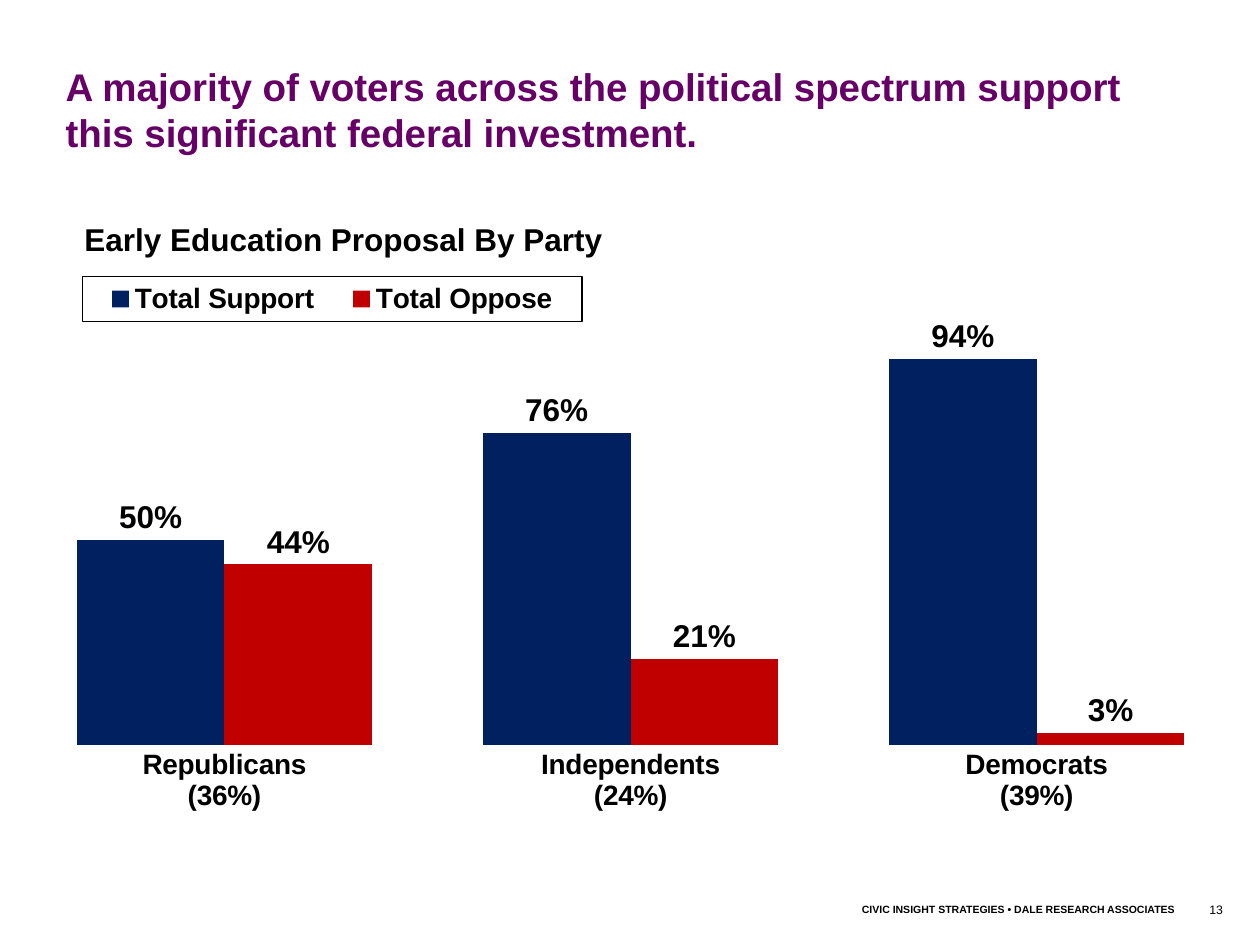
import pptx
import pptx.chart.data
import pptx.dml.color
import pptx.enum.chart
import pptx.enum.text
import pptx.oxml
import pptx.oxml.ns
import pptx.util
from pptx.util import Inches

COLORS = {"text": "000000", "title": "660066", "support": "002060", "oppose": "C00000"}


def add_text(page, text, place, size, color="text", bold=True, align=None, inset=None):
    box = page.shapes.add_textbox(*[Inches(length) for length in place])
    frame = box.text_frame
    frame.word_wrap = True
    frame.auto_size = pptx.enum.text.MSO_AUTO_SIZE.SHAPE_TO_FIT_TEXT
    if inset is not None:
        frame.margin_left = frame.margin_right = Inches(inset)
        frame.margin_top = frame.margin_bottom = Inches(inset)
    para = frame.paragraphs[0]
    para.text = text
    para.alignment = align
    para.font.name = "Arial"
    para.font.size = pptx.util.Pt(size)
    para.font.bold = bold
    para.font.color.rgb = pptx.dml.color.RGBColor.from_string(COLORS[color])


def set_layout(parent, index, fractions, target=""):
    for old in parent.findall(pptx.oxml.ns.qn("c:layout")):
        parent.remove(old)
    sizes = "".join(f'<c:{key} val="{value}"/>' for key, value in zip("xywh", fractions))
    parent.insert(index, pptx.oxml.parse_xml(
        f'<c:layout {pptx.oxml.ns.nsdecls("c")}><c:manualLayout>{target}'
        f'<c:xMode val="edge"/><c:yMode val="edge"/>{sizes}</c:manualLayout></c:layout>'))


deck = pptx.Presentation()
deck.slide_width = Inches(10)
deck.slide_height = Inches(7.5)
page = deck.slides.add_slide(deck.slide_layouts[6])

data = pptx.chart.data.CategoryChartData(number_format="0%")
data.categories = ["Republicans\n(36%)", "Independents\n(24%)", "Democrats\n(39%)"]
data.add_series("Total Support", [0.5, 0.76, 0.94])
data.add_series("Total Oppose", [0.44, 0.21, 0.03])
chart = page.shapes.add_chart(
    pptx.enum.chart.XL_CHART_TYPE.COLUMN_CLUSTERED,
    Inches(0.17), Inches(1.83), Inches(9.67), Inches(5.17), data).chart
chart.has_title = False
chart.font.name = "Arial"
chart.font.size = pptx.util.Pt(18)
chart.font.color.rgb = pptx.dml.color.RGBColor.from_string(COLORS["text"])

category_axis = chart.category_axis
category_axis.major_tick_mark = pptx.enum.chart.XL_TICK_MARK.NONE
category_axis.format.line.fill.background()
category_axis.tick_labels.font.name = "Arial"
category_axis.tick_labels.font.size = pptx.util.Pt(16)
category_axis.tick_labels.font.bold = True

value_axis = chart.value_axis
value_axis.minimum_scale = 0
value_axis.maximum_scale = 1
value_axis.major_unit = 0.2
value_axis.has_major_gridlines = False
value_axis.visible = False

plot = chart.plots[0]
plot.gap_width = 75
plot.overlap = 0
plot.vary_by_categories = False
for series, color in zip(plot.series, ["support", "oppose"]):
    series.format.fill.solid()
    series.format.fill.fore_color.rgb = pptx.dml.color.RGBColor.from_string(COLORS[color])
    labels = series.data_labels
    labels.show_value = True
    labels.position = pptx.enum.chart.XL_LABEL_POSITION.OUTSIDE_END
    labels.number_format = "0%"
    labels.number_format_is_linked = False
    labels.font.size = pptx.util.Pt(18)
    labels.font.bold = True

chart.has_legend = True
legend = chart.legend
legend.position = pptx.enum.chart.XL_LEGEND_POSITION.BOTTOM
legend.include_in_layout = False
legend.font.size = pptx.util.Pt(16)
legend.font.bold = True
legend_xml = chart.element.find(".//" + pptx.oxml.ns.qn("c:legend"))
set_layout(legend_xml, 1, [0.05, 0.07, 0.41, 0.07])
legend_xml.find(pptx.oxml.ns.qn("c:overlay")).addnext(pptx.oxml.parse_xml(
    f'<c:spPr {pptx.oxml.ns.nsdecls("c", "a")}><a:ln w="9525"><a:solidFill>'
    f'<a:srgbClr val="{COLORS["text"]}"/></a:solidFill></a:ln></c:spPr>'))
plot_xml = chart.element.find(".//" + pptx.oxml.ns.qn("c:plotArea"))
set_layout(plot_xml, 0, [0, 0.16, 1, 0.63], '<c:layoutTarget val="inner"/>')

add_text(page, "Early Education Proposal By Party", [0.67, 1.75, 4.83, 0.3], 18, inset=0)
add_text(page, "CIVIC INSIGHT STRATEGIES • DALE RESEARCH ASSOCIATES", [5.92, 7.12, 3.5, 0.2], 6,
         align=pptx.enum.text.PP_ALIGN.RIGHT)
add_text(page, "13", [9.5, 7.11, 0.5, 0.22], 7, bold=False)
add_text(page, "A majority of voters across the political spectrum support "
         "this significant federal investment.", [0.52, 0.5, 8.98, 0.74], 22, "title", inset=0)

deck.save("out.pptx")
